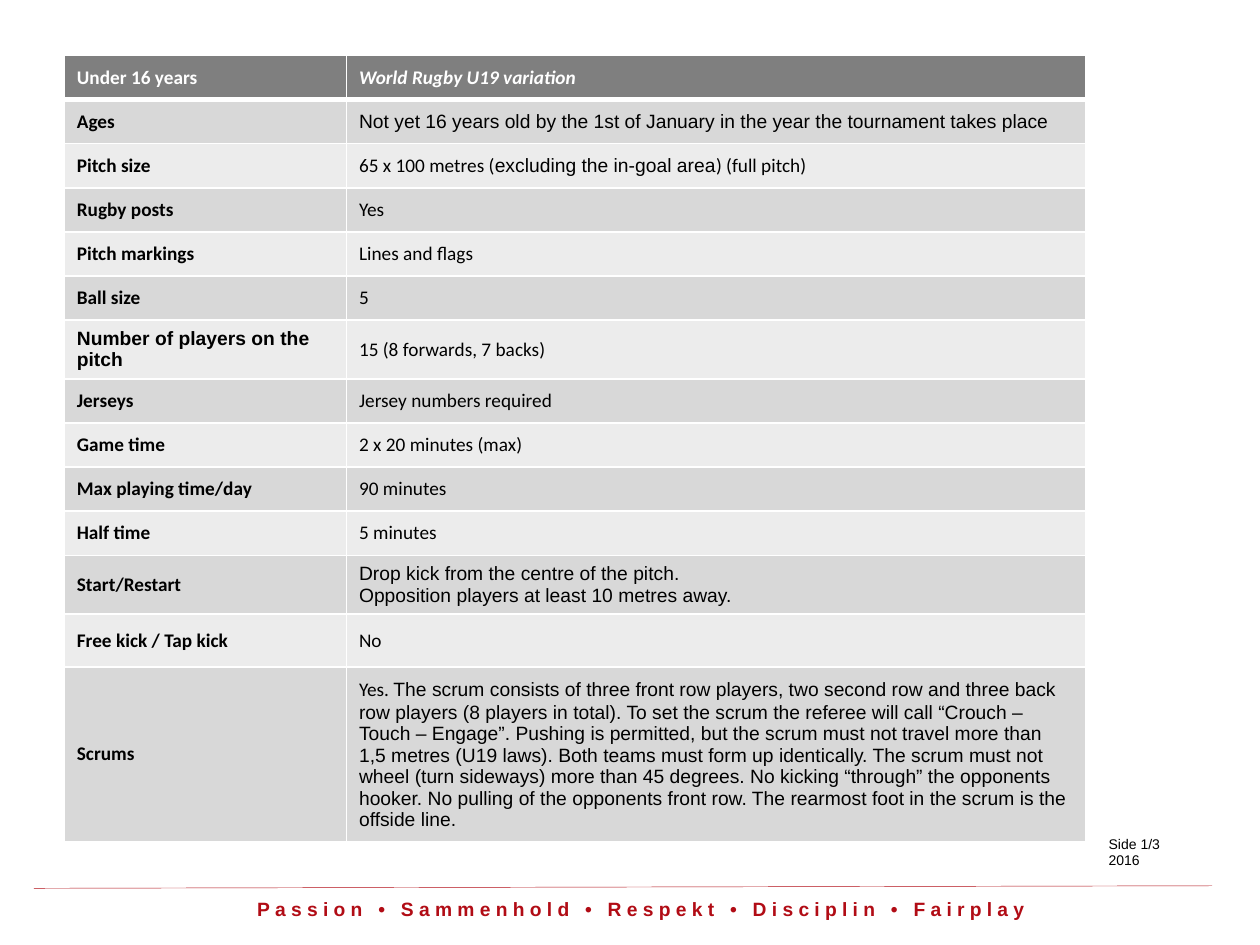
from lxml import etree
from pptx import Presentation
from pptx.dml.color import RGBColor
from pptx.enum import shapes, text
from pptx.oxml import ns
from pptx.util import Inches, Pt

COLOURS = {
    "header": "7F7F7F",
    "odd": "D8D8D8",
    "even": "ECECEC",
    "white": "FFFFFF",
    "black": "000000",
    "red": "B10C15",
}
COLUMN_WIDTHS = (2.24, 5.87)
ROW_HEIGHTS = [0.35] * 12 + [0.42] * 2
SANS, BODY = "Arial", "Calibri"

# Each cell is a list of paragraphs, each paragraph a list of (text, font) runs.
HEADER = (
    [[("Under 16 years", BODY)]],
    [[("World Rugby U19 variation", BODY)]],
)
RULES = [
    ([[("Ages", BODY)]],
     [[("Not yet 16 years old by the 1st of January in the year the "
        "tournament takes place", SANS)]]),
    ([[("Pitch size", BODY)]],
     [[("65 x 100 metres (", BODY), ("excluding the in-goal area", SANS),
       (") (full pitch)", BODY)]]),
    ([[("Rugby posts", BODY)]], [[("Yes", BODY)]]),
    ([[("Pitch markings", BODY)]], [[("Lines and flags", BODY)]]),
    ([[("Ball size", BODY)]], [[("5", BODY)]]),
    ([[("Number of players on the pitch", SANS)]],
     [[("15 (8 forwards, 7 backs)", BODY)]]),
    ([[("Jerseys", BODY)]], [[("Jersey numbers required", BODY)]]),
    ([[("Game time", BODY)]], [[("2 x 20 minutes (max)", BODY)]]),
    ([[("Max playing time/day", BODY)]], [[("90 minutes", BODY)]]),
    ([[("Half time", BODY)]], [[("5 minutes", BODY)]]),
    ([[("Start/Restart", BODY)]],
     [[("Drop kick from the centre of the pitch.", SANS)],
      [("Opposition players at least 10 metres away.", SANS)]]),
    ([[("Free kick / Tap kick", BODY)]], [[("No", BODY)]]),
    ([[("Scrums", BODY)]],
     [[("Yes. ", BODY),
       ("The scrum consists of three front row players, two second row and "
        "three back row players (8 players in total). To set the scrum the "
        "referee will call “Crouch – Touch – Engage”. Pushing is permitted, "
        "but the scrum must not travel more than 1,5 metres (U19 laws). Both "
        "teams must form up identically. The scrum must not wheel (turn "
        "sideways) more than 45 degrees. No kicking “through” the opponents "
        "hooker. No pulling of the opponents front row. The rearmost foot in "
        "the scrum is the offside line.", SANS)]]),
]


def rgb(name):
    return RGBColor.from_string(COLOURS[name])


def write_paragraphs(frame, paragraphs, size, colour, bold=False, italic=False):
    for index, runs in enumerate(paragraphs):
        paragraph = frame.add_paragraph() if index else frame.paragraphs[0]
        for words, font_name in runs:
            run = paragraph.add_run()
            run.text = words
            font = run.font
            font.name, font.size = font_name, Pt(size)
            font.bold, font.italic = bold, italic
            font.color.rgb = rgb(colour)


def add_borders(cell, top, bottom):
    """Draw white cell edges; top and bottom are widths in points."""
    properties = cell._tc.get_or_add_tcPr()
    for tag, width in (("lnL", 1), ("lnR", 1), ("lnT", top), ("lnB", bottom)):
        line = etree.SubElement(properties, ns.qn("a:" + tag), w=str(Pt(width)))
        fill = etree.SubElement(line, ns.qn("a:solidFill"))
        etree.SubElement(fill, ns.qn("a:srgbClr"), val=COLOURS["white"])


def add_rules_table(slide):
    rows = [HEADER] + RULES
    table = slide.shapes.add_table(
        len(rows), len(COLUMN_WIDTHS), Inches(0.51), Inches(0.44),
        Inches(sum(COLUMN_WIDTHS)), Inches(sum(ROW_HEIGHTS))).table
    for column, width in zip(table.columns, COLUMN_WIDTHS):
        column.width = Inches(width)
    for row, height in zip(table.rows, ROW_HEIGHTS):
        row.height = Inches(height)
    for row_index, contents in enumerate(rows):
        is_header = row_index == 0
        band = "header" if is_header else ("even", "odd")[row_index % 2]
        for column_index, paragraphs in enumerate(contents):
            cell = table.cell(row_index, column_index)
            add_borders(cell, 3 if row_index == 1 else 1, 3 if is_header else 1)
            cell.fill.solid()
            cell.fill.fore_color.rgb = rgb(band)
            cell.vertical_anchor = text.MSO_ANCHOR.MIDDLE
            write_paragraphs(
                cell.text_frame, paragraphs, 11,
                "white" if is_header else "black",
                bold=is_header or column_index == 0,
                italic=is_header and column_index == 1)


def add_text(slide, left, top, width, height, paragraphs, size, colour, bold=False):
    box = slide.shapes.add_textbox(
        Inches(left), Inches(top), Inches(width), Inches(height))
    frame = box.text_frame
    frame.word_wrap = True
    frame.auto_size = text.MSO_AUTO_SIZE.SHAPE_TO_FIT_TEXT
    write_paragraphs(frame, paragraphs, size, colour, bold)
    return frame


def add_motto(slide):
    frame = add_text(
        slide, 1.68, 7.07, 6.82, 0.47,
        [[("Passion • Sammenhold • Respekt • Disciplin • Fairplay", SANS)]],
        11, "red", bold=True)
    paragraph = frame.paragraphs[0]
    paragraph.alignment = text.PP_ALIGN.CENTER
    paragraph.runs[0].font._element.set("spc", "300")


def add_footer_line(slide):
    line = slide.shapes.add_connector(
        shapes.MSO_CONNECTOR.STRAIGHT,
        Inches(0.27), Inches(7.05), Inches(9.62), Inches(7.03))
    line.line.color.rgb = rgb("red")
    line.line.width = Pt(0.25)
    etree.SubElement(line._element.spPr, ns.qn("a:effectLst"))


def main():
    presentation = Presentation()
    presentation.slide_width, presentation.slide_height = Inches(10), Inches(7.5)
    slide = presentation.slides.add_slide(presentation.slide_layouts[6])
    add_motto(slide)
    add_footer_line(slide)
    add_rules_table(slide)
    add_text(slide, 8.7, 6.58, 1.14, 0.37,
             [[("Side 1/3", SANS)], [("2016", SANS)]], 8, "black")
    presentation.save("out.pptx")


if __name__ == "__main__":
    main()
